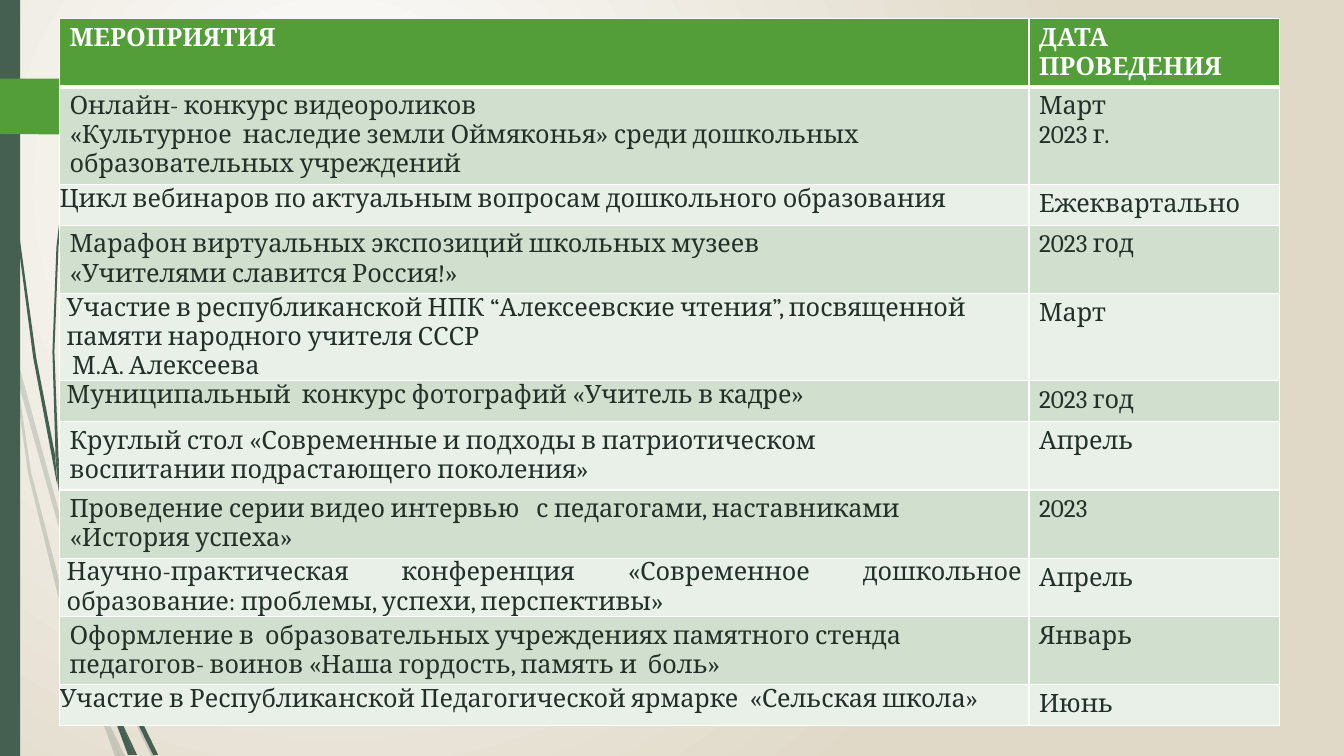
from lxml.etree import SubElement
from pptx import Presentation
from pptx.dml.color import RGBColor
from pptx.enum.shapes import MSO_SHAPE
from pptx.enum.text import PP_ALIGN
from pptx.oxml.ns import qn
from pptx.util import Cm, Pt

FONT = "Cambria"
DARK_GREEN, GREEN, WHITE, INK = "455F51", "549E39", "FFFFFF", "223028"
BANDS = ["E9F0E8", "D1DFCE"]
GRID_UNIT = Cm(0.0254)  # outlines are given on a grid of this step

# Strands of grass as outlines on the grid
PALE_STRANDS = [
    [(11, 350), (9, 322), (0, 282), (0, 299), (10, 344)],
    [(58, 522), (84, 599), (85, 586), (62, 520), (14, 345), (17, 376)],
    [(92, 607), (88, 596), (88, 610), (123, 694), (150, 750), (155, 750), (127, 692)],
    [(119, 750), (124, 750), (105, 711)],
    [(93, 683), (70, 619), (31, 469), (17, 376), (11, 350), (28, 470), (65, 621),
     (92, 693), (101, 714), (99, 707)],
    [(84, 599), (87, 646), (93, 683), (96, 692), (105, 711), (103, 706), (91, 646),
     (88, 610), (88, 608)],
    [(88, 584), (97, 512), (110, 462), (133, 404), (160, 349), (193, 295), (229, 245),
     (268, 198), (290, 175), (312, 154), (312, 153), (289, 175), (268, 197), (228, 244),
     (191, 294), (158, 348), (130, 403), (107, 461), (94, 512), (85, 584), (85, 586), (88, 596)],
    [(101, 714), (114, 750), (119, 750)],
    [(88, 608), (88, 610), (88, 596), (85, 586), (84, 599)],
    [(96, 692), (93, 683), (99, 707), (101, 714), (119, 750), (105, 711)],
]
DARK_STRANDS = [
    [(7, 110), (17, 233), (33, 355), (56, 477), (57, 481), (55, 457), (55, 453),
     (36, 355), (19, 232), (8, 109), (5, 48), (4, 0), (3, 0), (4, 48)],
    [(88, 592), (106, 645), (106, 633), (106, 631), (93, 590), (60, 472), (64, 505)],
    [(113, 649), (110, 641), (111, 656), (132, 708), (152, 749), (157, 749), (136, 706)],
    [(110, 691), (98, 657), (72, 556), (64, 505), (57, 477), (68, 557), (93, 659),
     (111, 708), (117, 722), (116, 717)],
    [(60, 472), (58, 453), (54, 349), (58, 245), (63, 193), (70, 141), (62, 193),
     (56, 245), (52, 349), (55, 449)],
    [(133, 749), (136, 749), (122, 719)],
    [(57, 477), (64, 505), (60, 472), (55, 449), (55, 453)],
    [(111, 633), (125, 552), (158, 476), (205, 406), (231, 374), (245, 359), (261, 344),
     (260, 344), (245, 358), (231, 373), (204, 405), (156, 474), (122, 551), (106, 631), (110, 641)],
    [(117, 722), (127, 749), (131, 749)],
    [(106, 645), (110, 691), (116, 706), (122, 719), (121, 716), (111, 656), (109, 651)],
    [(106, 645), (109, 651), (111, 656), (110, 641), (106, 631), (106, 633)],
    [(116, 706), (110, 691), (116, 717), (117, 722), (130, 749), (133, 749), (122, 719)],
]
BOOKMARK = [(0, 78), (146, 78), (148, 79), (173, 104), (173, 108), (148, 133), (146, 134), (0, 133)]

# Each row: lines of the event, lines of the date, side inset of the event cell
# (None keeps the usual cell margins), whether the event is justified
HEADER = (["МЕРОПРИЯТИЯ"], ["ДАТА ПРОВЕДЕНИЯ"], None, False)
EVENTS = [
    (["Онлайн- конкурс видеороликов",
      "«Культурное  наследие земли Оймяконья» среди дошкольных",
      "образовательных учреждений"], ["Март", "2023 г."], None, False),
    (["Цикл вебинаров по актуальным вопросам дошкольного образования"],
     ["Ежеквартально"], 0, False),
    (["Марафон виртуальных экспозиций школьных музеев",
      "«Учителями славится Россия!»"], ["2023 год"], None, False),
    (["Участие в республиканской НПК “Алексеевские чтения”, посвященной "
      "памяти народного учителя СССР", " М.А. Алексеева"], ["Март"], 0.18, False),
    (["Муниципальный  конкурс фотографий «Учитель в кадре»"], ["2023 год"], 0.18, True),
    (["Круглый стол «Современные и подходы в патриотическом",
      "воспитании подрастающего поколения»"], ["Апрель"], None, False),
    (["Проведение серии видео интервью   с педагогами, наставниками",
      "«История успеха»"], ["2023"], None, False),
    (["Научно-практическая конференция «Современное дошкольное "
      "образование: проблемы, успехи, перспективы»"], ["Апрель"], 0.18, True),
    (["Оформление в  образовательных учреждениях памятного стенда "
      "педагогов- воинов «Наша гордость, память и  боль»"], ["Январь"], None, False),
    (["Участие в Республиканской Педагогической ярмарке  «Сельская школа»"],
     ["Июнь"], 0, False),
]


def color(value):
    return RGBColor.from_string(value)


def paint(shape, value, opacity=100):
    shape.shadow.inherit = False
    shape.line.fill.background()
    shape.fill.solid()
    shape.fill.fore_color.rgb = color(value)
    if opacity < 100:
        fill_color = shape.fill._xPr.find(qn("a:solidFill"))[0]
        SubElement(fill_color, qn("a:alpha"), val=str(opacity * 1000))


def add_outline(shapes, points, left, top, value, opacity=100):
    builder = shapes.build_freeform(*points[0], scale=GRID_UNIT)
    builder.add_line_segments(points[1:], close=True)
    paint(builder.convert_to_shape(left, top), value, opacity)


def set_background(slide):
    fill = slide.background.fill
    fill.gradient()
    for stop, value in zip(fill.gradient_stops, [WHITE, "E0D9C8"]):
        stop.color.rgb = color(value)
    linear = slide.element.find(".//" + qn("a:lin"))
    gradient = linear.getparent()
    gradient.remove(linear)
    circle = SubElement(gradient, qn("a:path"), path="circle")
    SubElement(circle, qn("a:fillToRect"), l="50000", t="50000", r="100000", b="100000")


def add_decoration(slide, left, top, height):
    # Grass
    for strands, opacity in [(PALE_STRANDS, 20), (DARK_STRANDS, 100)]:
        group = slide.shapes.add_group_shape()
        for points in strands:
            add_outline(group.shapes, points, left, top, DARK_GREEN, opacity)
    # Side bar and bookmark
    bar = slide.shapes.add_shape(MSO_SHAPE.RECTANGLE, left, top, Cm(0.51), height)
    paint(bar, DARK_GREEN)
    add_outline(slide.shapes, BOOKMARK, left, top, GREEN)


def set_borders(cell, top, bottom):
    properties = cell._tc.get_or_add_tcPr()
    for side, points in [("L", 1), ("R", 1), ("T", top), ("B", bottom)]:
        line = SubElement(properties, qn("a:ln" + side), w=str(Pt(points)))
        SubElement(SubElement(line, qn("a:solidFill")), qn("a:srgbClr"), val=WHITE)


def fill_cell(cell, lines, background, text_color, bold, justified=False):
    cell.fill.solid()
    cell.fill.fore_color.rgb = color(background)
    for index, line in enumerate(lines):
        frame = cell.text_frame
        paragraph = frame.add_paragraph() if index else frame.paragraphs[0]
        paragraph.alignment = PP_ALIGN.JUSTIFY if justified else PP_ALIGN.LEFT
        run = paragraph.add_run()
        run.text = line
        run.font.name = FONT
        run.font.size = Pt(18)
        run.font.bold = bold
        run.font.color.rgb = color(text_color)


def add_schedule(slide, left, top, width, height):
    rows = [HEADER] + EVENTS
    frame = slide.shapes.add_table(len(rows), 2, left, top, width, height)
    table = frame.table
    date_width = Cm(6.32)
    table.columns[0].width = width - date_width
    table.columns[1].width = date_width
    for index, (event, date, inset, justified) in enumerate(rows):
        table.rows[index].height = Cm(1.03)  # rows grow with their text
        is_header = index == 0
        background = GREEN if is_header else BANDS[index % 2]
        text_color = WHITE if is_header else INK
        event_cell, date_cell = table.cell(index, 0), table.cell(index, 1)
        for cell in (event_cell, date_cell):
            set_borders(cell, 3 if index == 1 else 1, 3 if is_header else 1)
        fill_cell(event_cell, event, background, text_color, is_header, justified)
        fill_cell(date_cell, date, background, text_color, is_header)
        if inset is not None:
            event_cell.margin_left = event_cell.margin_right = Cm(inset)
            event_cell.margin_top = event_cell.margin_bottom = 0
    frame.height = height


def main():
    presentation = Presentation()
    presentation.slide_width, presentation.slide_height = Cm(33.87), Cm(19.05)
    slide = presentation.slides.add_slide(presentation.slide_layouts[6])
    set_background(slide)
    add_decoration(slide, 0, 0, presentation.slide_height)
    add_schedule(slide, Cm(1.5), Cm(0.47), Cm(30.75), Cm(17.58))
    presentation.save("out.pptx")


if __name__ == "__main__":
    main()
